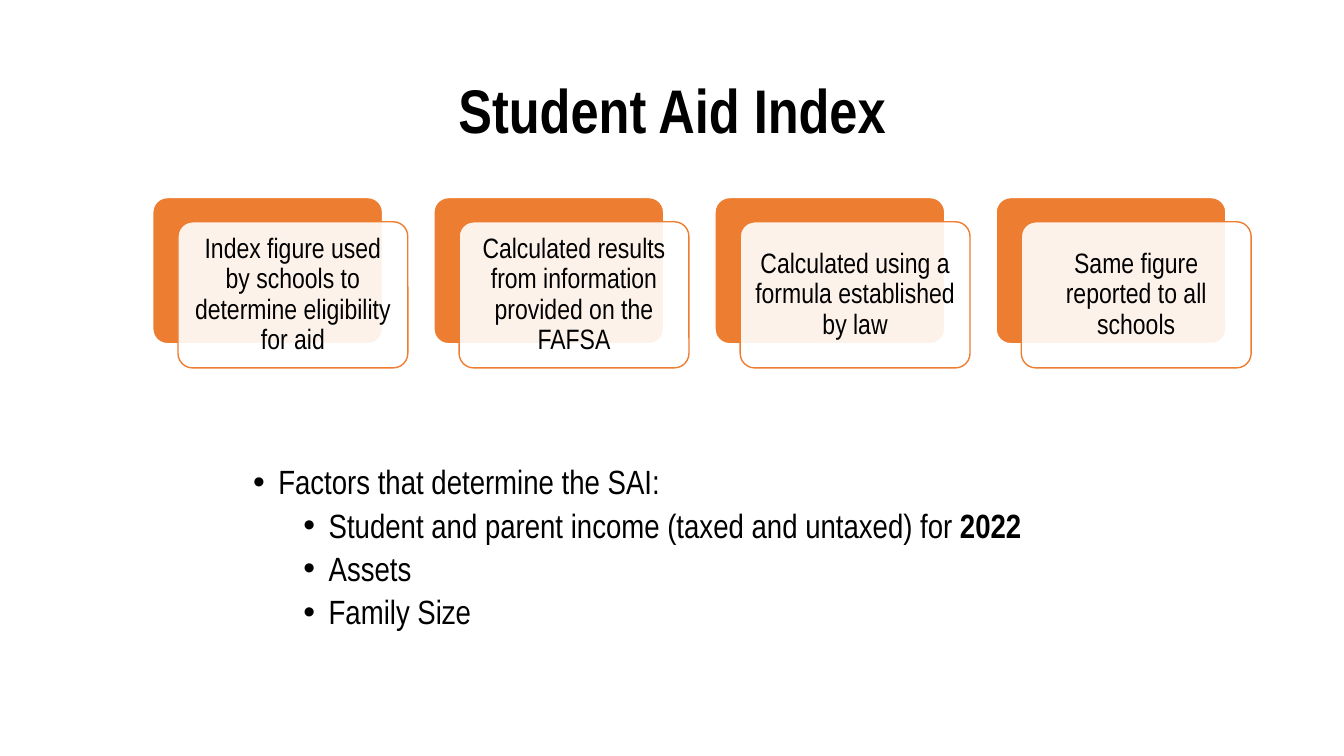
from lxml.etree import SubElement
from pptx import Presentation
from pptx.dml.color import RGBColor
from pptx.enum.shapes import MSO_SHAPE
from pptx.enum.text import MSO_ANCHOR, MSO_AUTO_SIZE, PP_ALIGN
from pptx.oxml.ns import qn
from pptx.util import Inches, Pt

ORANGE, WHITE, BLACK = "ED7D31", "FFFFFF", "000000"


def color(hex_string):
    return RGBColor.from_string(hex_string)


def add_run(paragraph, text, size, bold=False):
    run = paragraph.add_run()
    run.text = text
    run.font.name = "Arial Narrow"
    run.font.size = Pt(size)
    run.font.bold = bold
    run.font.color.rgb = color(BLACK)


presentation = Presentation()
presentation.slide_width = Inches(13.33)
presentation.slide_height = Inches(7.5)
slide = presentation.slides.add_slide(presentation.slide_layouts[1])

# Title
title = slide.shapes.title
title.left, title.top = Inches(0.92), Inches(0.4)
title.width, title.height = Inches(11.5), Inches(1.45)
title.text_frame.auto_size = MSO_AUTO_SIZE.NONE
title.text_frame.vertical_anchor = MSO_ANCHOR.MIDDLE
paragraph = title.text_frame.paragraphs[0]
paragraph.alignment = PP_ALIGN.CENTER
paragraph.line_spacing = 0.9
add_run(paragraph, "Student Aid Index", 44, bold=True)

# Cards: an orange panel with a translucent white panel in front
card_texts = [
    "Index figure used by schools to determine eligibility for aid",
    "Calculated results from information provided on the FAFSA",
    "Calculated using a formula established by law",
    "Same figure reported to all schools",
]
panel_styles = [(0, 0, ORANGE, WHITE), (0.25, 0.24, WHITE, ORANGE)]
for index, card_text in enumerate(card_texts):
    card_left = 1.515 + index * 2.788
    for offset_x, offset_y, fill, line in panel_styles:
        panel = slide.shapes.add_shape(
            MSO_SHAPE.ROUNDED_RECTANGLE,
            Inches(card_left + offset_x), Inches(1.96 + offset_y),
            Inches(2.28), Inches(1.45))
        panel.adjustments[0] = 0.1
        panel.shadow.inherit = False
        panel.fill.solid()
        panel.fill.fore_color.rgb = color(fill)
        panel.line.color.rgb = color(line)
        panel.line.width = Pt(1)

    # The last panel made is the front one: 90% opaque, with the text
    front_color = panel._element.spPr.find(qn("a:solidFill"))[0]
    SubElement(front_color, qn("a:alpha"), val="90000")
    frame = panel.text_frame
    frame.word_wrap = True
    frame.vertical_anchor = MSO_ANCHOR.MIDDLE
    frame.margin_left = frame.margin_right = Inches(0.08)
    frame.margin_top = frame.margin_bottom = Inches(0.08)
    paragraph = frame.paragraphs[0]
    paragraph.alignment = PP_ALIGN.CENTER
    paragraph.line_spacing = 0.9
    add_run(paragraph, card_text, 20)

# Factor list: level and runs of (text, bold)
factors = [
    (0, [("Factors that determine the SAI:", False)]),
    (1, [("Student and parent income (taxed and untaxed) for ", False),
         ("2022", True)]),
    (1, [("Assets", False)]),
    (1, [("Family Size", False)]),
]
body = slide.placeholders[1]
body.left, body.top = Inches(2.41), Inches(4.57)
body.width, body.height = Inches(8.52), Inches(1.94)
frame = body.text_frame
frame.auto_size = MSO_AUTO_SIZE.NONE
frame.vertical_anchor = MSO_ANCHOR.TOP
for index, (level, runs) in enumerate(factors):
    paragraph = frame.add_paragraph() if index else frame.paragraphs[0]
    paragraph.level = level
    paragraph.line_spacing = 0.9
    paragraph.space_before = Pt(5 if level else 10)
    properties = paragraph._p.get_or_add_pPr()
    properties.set("marL", str(Inches(0.25 + 0.5 * level)))
    properties.set("indent", str(Inches(-0.25)))
    SubElement(properties, qn("a:buFont"), typeface="Arial")
    SubElement(properties, qn("a:buChar"), char="•")
    for text, bold in runs:
        add_run(paragraph, text, 24, bold)

presentation.save("out.pptx")
